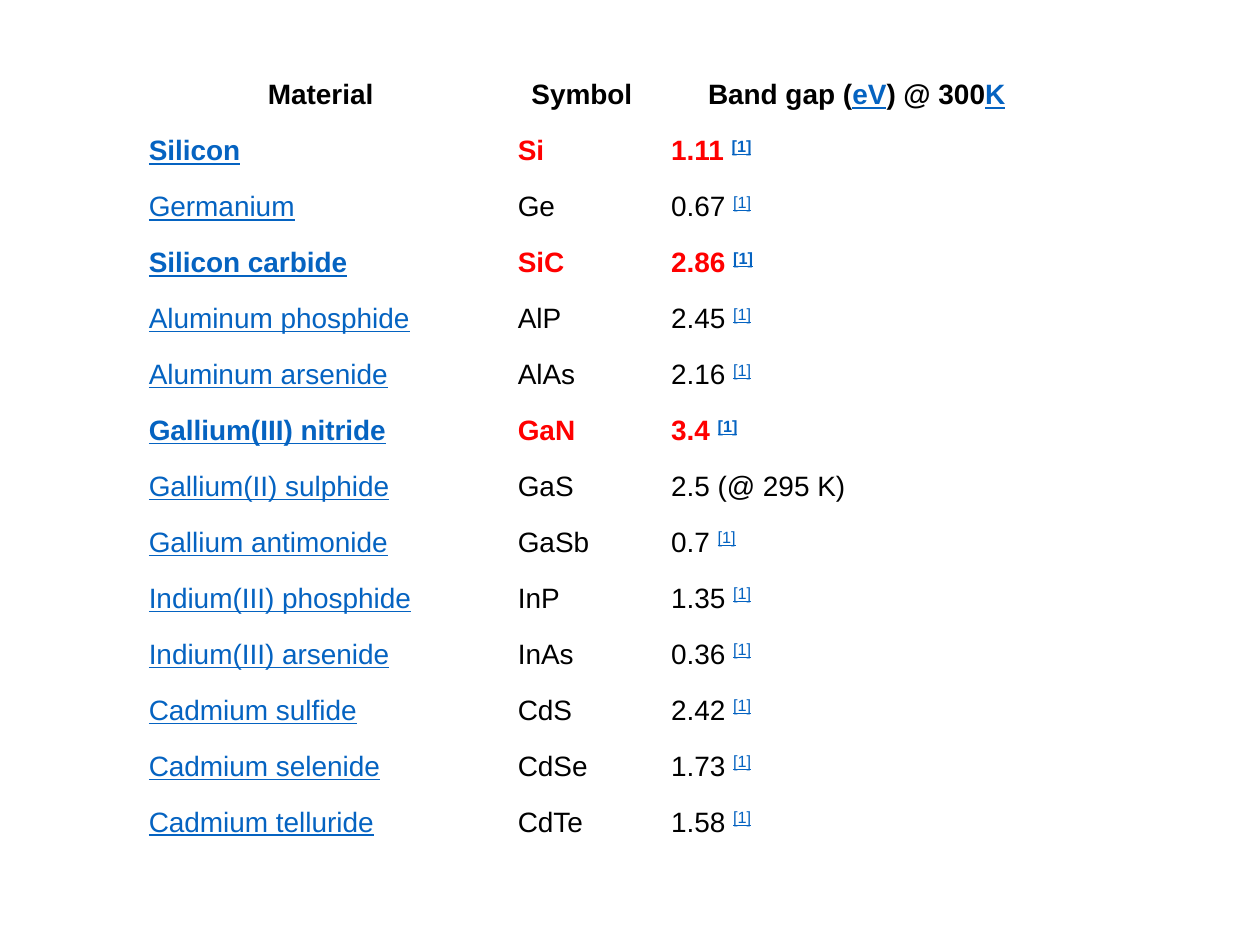
from dataclasses import dataclass

from pptx import Presentation as new_presentation
from pptx.dml.color import RGBColor as Color
from pptx.enum.text import MSO_ANCHOR as Anchor, PP_ALIGN as Align
from pptx.table import _Cell as Cell
from pptx.util import Pt


@dataclass(frozen=True)
class Theme:
    font: str = "Arial"
    size: int = 16
    text: Color = Color(0x00, 0x00, 0x00)
    link: Color = Color(0x05, 0x63, 0xC1)
    highlight: Color = Color(0xFF, 0x00, 0x00)
    raised: str = "30000"


@dataclass(frozen=True)
class TextRun:
    text: str
    color: Color
    bold: bool = False
    underline: bool = False
    raised: bool = False


@dataclass(frozen=True)
class Material:
    name: str
    symbol: str
    band_gap: str
    cited: bool = True
    highlighted: bool = False


THEME = Theme()
LEFT, TOP, ROW_HEIGHT = 77.8, 41.8, 32
COLUMN_WIDTHS = (210.9, 87.6, 226.5)
MATERIALS = (
    Material("Silicon", "Si", "1.11", highlighted=True),
    Material("Germanium", "Ge", "0.67"),
    Material("Silicon carbide", "SiC", "2.86", highlighted=True),
    Material("Aluminum phosphide", "AlP", "2.45"),
    Material("Aluminum arsenide", "AlAs", "2.16"),
    Material("Gallium(III) nitride", "GaN", "3.4", highlighted=True),
    Material("Gallium(II) sulphide", "GaS", "2.5 (@ 295 K)", cited=False),
    Material("Gallium antimonide", "GaSb", "0.7"),
    Material("Indium(III) phosphide", "InP", "1.35"),
    Material("Indium(III) arsenide", "InAs", "0.36"),
    Material("Cadmium sulfide", "CdS", "2.42"),
    Material("Cadmium selenide", "CdSe", "1.73"),
    Material("Cadmium telluride", "CdTe", "1.58"),
)


def link(text: str, bold: bool, raised: bool = False) -> TextRun:
    return TextRun(text, THEME.link, bold, underline=True, raised=raised)


def header_cells() -> list[list[TextRun]]:
    def heading(text: str) -> TextRun:
        return TextRun(text, THEME.text, bold=True)

    return [
        [heading("Material")],
        [heading("Symbol")],
        [heading("Band gap ("), link("eV", True), heading(") @ 300"), link("K", True)],
    ]


def material_cells(material: Material) -> list[list[TextRun]]:
    bold = material.highlighted
    color = THEME.highlight if bold else THEME.text
    if material.cited:
        band_gap = [TextRun(material.band_gap + " ", color, bold), link("[1]", bold, raised=True)]
    else:
        band_gap = [TextRun(material.band_gap, color, bold)]
    return [[link(material.name, bold)], [TextRun(material.symbol, color, bold)], band_gap]


def fill_cell(cell: Cell, text_runs: list[TextRun], alignment: Align) -> None:
    cell.fill.background()
    cell.vertical_anchor = Anchor.TOP
    paragraph = cell.text_frame.paragraphs[0]
    paragraph.alignment = alignment
    for text_run in text_runs:
        run = paragraph.add_run()
        run.text = text_run.text
        font = run.font
        font.name = THEME.font
        font.size = Pt(THEME.size)
        font.bold = text_run.bold
        font.underline = text_run.underline
        font.color.rgb = text_run.color
        if text_run.raised:
            run._r.get_or_add_rPr().set("baseline", THEME.raised)


def main() -> None:
    presentation = new_presentation()
    presentation.slide_width, presentation.slide_height = Pt(720), Pt(540)
    slide = presentation.slides.add_slide(presentation.slide_layouts[6])

    rows = [header_cells(), *map(material_cells, MATERIALS)]
    shape = slide.shapes.add_table(
        len(rows), len(COLUMN_WIDTHS), Pt(LEFT), Pt(TOP),
        Pt(sum(COLUMN_WIDTHS)), Pt(ROW_HEIGHT * len(rows)),
    )
    table = shape.table
    table.first_row = table.horz_banding = False
    for column, width in zip(table.columns, COLUMN_WIDTHS):
        column.width = Pt(width)
    for row_index, (row, contents) in enumerate(zip(table.rows, rows)):
        row.height = Pt(ROW_HEIGHT)
        alignment = Align.LEFT if row_index else Align.CENTER
        for cell, text_runs in zip(row.cells, contents):
            fill_cell(cell, text_runs, alignment)

    presentation.save("out.pptx")


if __name__ == "__main__":
    main()
